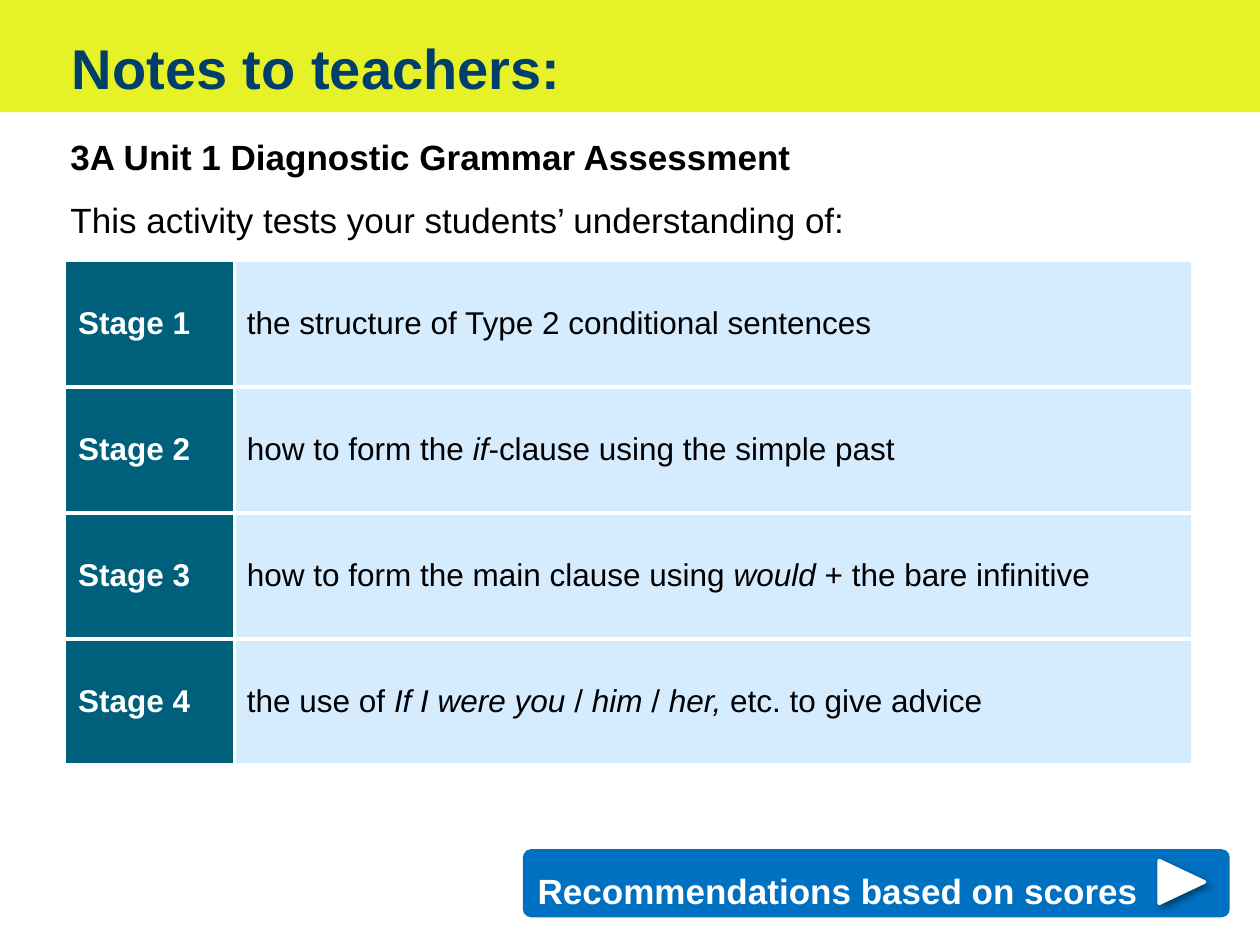
import pptx
import pptx.util
import pptx.dml.color
import pptx.enum.shapes
import pptx.enum.text
import pptx.oxml
import pptx.oxml.ns
from pptx.util import Inches

RGBColor = pptx.dml.color.RGBColor
SHAPE = pptx.enum.shapes.MSO_SHAPE
ANCHOR = pptx.enum.text.MSO_ANCHOR
ALIGN = pptx.enum.text.PP_ALIGN

WHITE = RGBColor(0xFF, 0xFF, 0xFF)
BLACK = RGBColor(0x00, 0x00, 0x00)
LIME = RGBColor(0xE7, 0xF1, 0x27)
NAVY = RGBColor(0x00, 0x3E, 0x6C)
BLUE = RGBColor(0x00, 0x70, 0xC0)
TEAL = RGBColor(0x00, 0x5F, 0x7A)
PALE = RGBColor(0xD5, 0xEC, 0xFF)

NS = pptx.oxml.ns.nsdecls("a")
SHADOW = (f'<a:effectLst {NS}><a:outerShdw blurRad="50800" dist="38100" dir="2700000" '
          'algn="tl" rotWithShape="0"><a:srgbClr val="000000"><a:alpha val="40000"/>'
          '</a:srgbClr></a:outerShdw></a:effectLst>')


class Deck:
    """Holds the style and the current slide."""
    font = "Arial"

    def __init__(self):
        self.prs = pptx.Presentation()
        self.prs.slide_width, self.prs.slide_height = Inches(10), Inches(7.5)
        self.s = self.prs.slides.add_slide(self.prs.slide_layouts[6])

    def add_runs(self, p, runs, size, color, bold=False, spacing=None):
        """Fill a paragraph; every second run is italic."""
        p.alignment = ALIGN.LEFT
        if spacing:
            p.line_spacing = spacing
        for i, text in enumerate(runs):
            r = p.add_run()
            r.text = text
            r.font.name, r.font.size = self.font, pptx.util.Pt(size)
            r.font.bold, r.font.italic = bold, i % 2 == 1
            r.font.color.rgb = color

    def shape(self, kind, x, y, w, h, fill):
        sp = self.s.shapes.add_shape(kind, Inches(x), Inches(y), Inches(w), Inches(h))
        sp.shadow.inherit = False
        sp.fill.solid()
        sp.fill.fore_color.rgb = fill
        sp.line.fill.background()
        return sp

    def text(self, x, y, w, h):
        tf = self.s.shapes.add_textbox(Inches(x), Inches(y), Inches(w), Inches(h)).text_frame
        tf.word_wrap = True
        tf.margin_left = tf.margin_top = tf.margin_right = tf.margin_bottom = 0
        return tf

    def border(self, cell, widths):
        """Draw white cell borders, ahead of the cell's fill."""
        tcPr = cell._tc.get_or_add_tcPr()
        for i, (side, width) in enumerate(widths.items()):
            tcPr.insert(i, pptx.oxml.parse_xml(
                f'<a:{side} {NS} w="{pptx.util.Pt(width)}"><a:solidFill>'
                f'<a:srgbClr val="{WHITE}"/></a:solidFill></a:{side}>'))

    def table(self, x, y, cols, row_h, rows):
        table = self.s.shapes.add_table(len(rows), len(cols), Inches(x), Inches(y),
                                        Inches(sum(cols)), Inches(row_h * len(rows))).table
        table.first_row = table.horz_banding = False
        for col, w in zip(table.columns, cols):
            col.width = Inches(w)
        for i, row in enumerate(rows):
            for j, runs in enumerate(row):
                cell = table.cell(i, j)
                cell.vertical_anchor = ANCHOR.MIDDLE
                cell.fill.solid()
                cell.fill.fore_color.rgb = PALE if j else TEAL
                self.add_runs(cell.text_frame.paragraphs[0], runs, 18,
                              BLACK if j else WHITE, bold=j == 0)
                self.border(cell, {"lnL": 2.25 if j else 1, "lnR": 1 if j else 2.25,
                                   "lnT": 2.25 if i else 1, "lnB": 2.25})

    def button(self, x, y, w, h, label):
        box = self.shape(SHAPE.ROUNDED_RECTANGLE, x, y, w, h, BLUE)
        box.adjustments[0] = 0.12
        tf = box.text_frame
        tf.word_wrap = True
        tf.vertical_anchor = ANCHOR.MIDDLE
        self.add_runs(tf.paragraphs[0], [label], 20, WHITE, True, pptx.util.Pt(32))

        arrow = self.shape(SHAPE.ISOSCELES_TRIANGLE, x + w - 0.55, y + 0.08, 0.34, 0.36, WHITE)
        arrow.rotation = 90
        arrow.line.color.rgb = WHITE
        arrow.line.width = pptx.util.Pt(2)
        spPr = arrow._element.spPr
        spPr.find(pptx.oxml.ns.qn("a:ln")).append(pptx.oxml.parse_xml(f"<a:round {NS}/>"))
        spPr.replace(spPr.find(pptx.oxml.ns.qn("a:effectLst")), pptx.oxml.parse_xml(SHADOW))
        self.s.shapes.add_group_shape([box, arrow])


def main():
    deck = Deck()

    # Title band
    deck.shape(SHAPE.RECTANGLE, 0, 0, 10, 0.89, LIME)
    tf = deck.text(0.57, 0.24, 6.88, 0.85)
    deck.add_runs(tf.paragraphs[0], ["Notes to teachers:"], 32, NAVY, True, pptx.util.Pt(40))

    # Introduction
    tf = deck.text(0.56, 0.91, 8.7, 1.16)
    deck.add_runs(tf.paragraphs[0], ["3A Unit 1 Diagnostic Grammar Assessment"],
                  20, BLACK, True, 1.5)
    deck.add_runs(tf.add_paragraph(), ["This activity tests your students’ understanding of:"],
                  20, BLACK, False, 1.5)

    # Button to the next part
    deck.button(4.15, 6.74, 5.61, 0.54, "Recommendations based on scores")

    # Stages
    stages = [
        ["the structure of Type 2 conditional sentences"],
        ["how to form the ", "if", "-clause using the simple past"],
        ["how to form the main clause using ", "would", " + the bare infinitive"],
        ["the use of ", "If I were you", " / ", "him", " / ", "her,", " etc. to give advice"],
    ]
    deck.table(0.52, 2.07, [1.34, 7.6], 1,
               [([f"Stage {n}"], runs) for n, runs in enumerate(stages, 1)])

    deck.prs.save("out.pptx")


if __name__ == "__main__":
    main()
